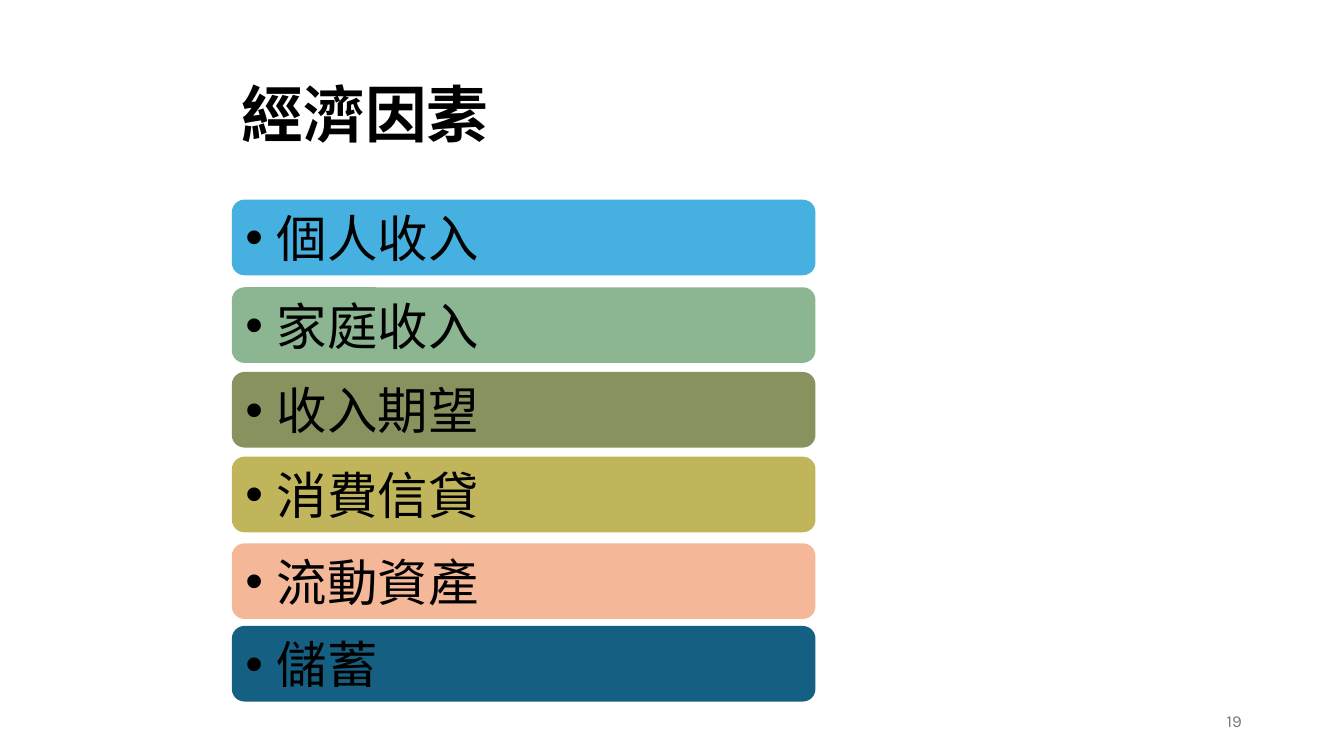
from dataclasses import dataclass

from lxml import etree
from pptx import Presentation
from pptx import util as u
from pptx.dml import color
from pptx.enum import shapes, text
from pptx.oxml import ns

FONT = "Karla"
COLORS = {
    "ink": "000000",
    "number": "797979",
    "blue": "46B1E1",
    "green": "8CB591",
    "olive": "87925E",
    "gold": "C1B55B",
    "peach": "F4B898",
    "navy": "156082",
}
LEFT = 165.6
BAR_WIDTH, BAR_HEIGHT = 416.9, 54
INDENT = 22.5


@dataclass
class Factor:
    label: str
    top: float
    fill: str


FACTORS = [
    Factor("個人收入", 142.6, "blue"),
    Factor("家庭收入", 205.2, "green"),
    Factor("收入期望", 265.7, "olive"),
    Factor("消費信貸", 326.2, "gold"),
    Factor("流動資產", 388.1, "peach"),
    Factor("儲蓄", 447.1, "navy"),
]


def rgb(name: str) -> color.RGBColor:
    """Return the named colour."""
    return color.RGBColor.from_string(COLORS[name])


def place(shape, left: float, top: float, width: float, height: float) -> None:
    """Position a shape, in points."""
    shape.left, shape.top = u.Pt(left), u.Pt(top)
    shape.width, shape.height = u.Pt(width), u.Pt(height)


def write(shape, words: str, size: float, ink: str = "ink", bold: bool = False,
          align=text.PP_ALIGN.LEFT, anchor=text.MSO_ANCHOR.MIDDLE):
    """Write one formatted line and return its paragraph."""
    frame = shape.text_frame
    frame.text = words
    frame.word_wrap = True
    frame.vertical_anchor = anchor
    paragraph = frame.paragraphs[0]
    paragraph.alignment = align
    font = paragraph.runs[0].font
    font.name, font.size, font.bold = FONT, u.Pt(size), bold
    font.color.rgb = rgb(ink)
    return paragraph


def add_bullet(paragraph) -> None:
    """Give a paragraph a hanging bullet."""
    properties = paragraph._p.get_or_add_pPr()
    properties.set("marL", str(u.Pt(INDENT)))
    properties.set("indent", str(-u.Pt(INDENT)))
    etree.SubElement(properties, ns.qn("a:buFont")).set("typeface", "Arial")
    etree.SubElement(properties, ns.qn("a:buChar")).set("char", "•")


def add_factor(slide, factor: Factor) -> None:
    """Draw one rounded bar with its bulleted label."""
    bar = slide.shapes.add_shape(
        shapes.MSO_SHAPE.ROUNDED_RECTANGLE, u.Pt(LEFT), u.Pt(factor.top),
        u.Pt(BAR_WIDTH), u.Pt(BAR_HEIGHT))
    bar.shadow.inherit = False
    bar.fill.solid()
    bar.fill.fore_color.rgb = rgb(factor.fill)
    bar.line.fill.background()
    add_bullet(write(bar, factor.label, 36))


def main() -> None:
    """Build and save the slide."""
    presentation = Presentation()
    presentation.slide_width, presentation.slide_height = u.Pt(960), u.Pt(540)
    slide = presentation.slides.add_slide(presentation.slide_layouts[5])

    title = slide.shapes.title
    place(title, LEFT, 50.4, 555.1, 60.5)
    write(title, "經濟因素", 44, bold=True, anchor=text.MSO_ANCHOR.TOP)
    title.text_frame.auto_size = text.MSO_AUTO_SIZE.SHAPE_TO_FIT_TEXT

    for factor in FACTORS:
        add_factor(slide, factor)

    number = slide.shapes.add_textbox(u.Pt(678.2), u.Pt(500.4), u.Pt(216), u.Pt(28.8))
    write(number, "19", 12, ink="number", align=text.PP_ALIGN.RIGHT)

    presentation.save("out.pptx")


if __name__ == "__main__":
    main()
